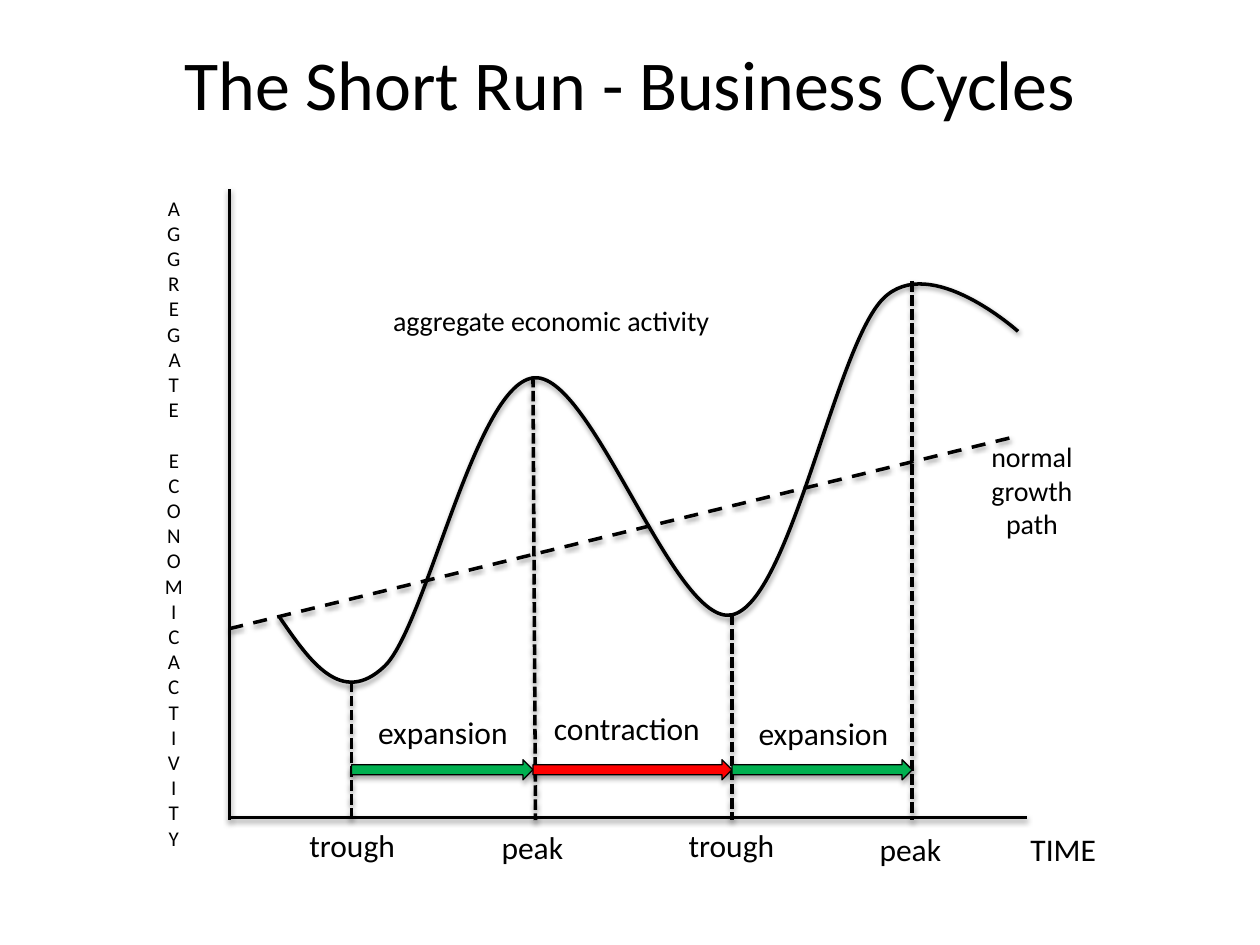
"""Build the business cycles slide: activity curve, growth path and cycle phases."""
from lxml import etree
from pptx import Presentation
from pptx.dml.color import RGBColor
from pptx.enum import dml, shapes, text
from pptx.oxml.ns import qn
from pptx.util import Inches, Pt

THEME = {
    "font": "Calibri", "ink": "000000", "up": "00B050", "down": "FF0000",
    "title": 40, "label": 18, "note": 16, "axis": 12, "line": 2, "outline": 0.75,
}
TITLE = "The Short Run - Business Cycles"
AXIS_X, BASE_Y = 1.82, 6.51
AXES = [((AXIS_X, 1.5), (AXIS_X, BASE_Y)), ((8.15, 6.49), (1.83, 6.49))]
GROWTH = ((AXIS_X, 4.99), (8.08, 3.46))
CURVE = [
    (2.22, 4.9),
    (2.46, 5.25), (2.71, 5.61), (3.05, 5.29),
    (3.38, 4.98), (3.77, 3.06), (4.23, 3),
    (4.69, 2.93), (5.35, 4.98), (5.81, 4.88),
    (6.27, 4.78), (6.63, 2.75), (7.01, 2.37),
    (7.38, 2), (8.08, 2.63), (8.08, 2.63),
]
TURNS = [
    ("trough", 2.79, 2.79, 5.41, (2.34, 6.51)),
    ("peak", 4.23, 4.25, 2.99, (3.77, 6.52)),
    ("trough", 5.81, 5.81, 4.88, (5.35, 6.51)),
    ("peak", 7.24, 7.24, 2.23, (6.77, 6.54)),
]
PHASES = [
    ("expansion", "up", (2.79, 5.61)),
    ("contraction", "down", (4.25, 5.58)),
    ("expansion", "up", (5.81, 5.62)),
]
AXIS_NAME = ["AGGREGATE", " ECONOMI", "C ACT I V I TY"]
NOTES = [
    (AXIS_NAME, (1.21, 1.5, 0.34, 5.35), "axis", "CENTER"),
    (["TIME"], (8.08, 6.54, 0.91, 0.4), "label", "LEFT"),
    (["normal growth path"], (7.58, 3.44, 1.22, 0.91), "note", "CENTER"),
    (["aggregate economic activity"], (2.94, 2.36, 2.87, 0.64), "note", "CENTER"),
]


def color(name):
    return RGBColor.from_string(THEME[name])


def write(tf, lines, size, align="CENTER"):
    tf.word_wrap = True
    for i, line in enumerate(lines):
        p = tf.add_paragraph() if i else tf.paragraphs[0]
        p.alignment = text.PP_ALIGN[align]
        r = p.add_run()
        r.text = line
        r.font.name, r.font.size = THEME["font"], Pt(THEME[size])
        r.font.color.rgb = color("ink")


def label(s, lines, box, size, align="CENTER"):
    tf = s.shapes.add_textbox(*map(Inches, box)).text_frame
    write(tf, lines, size, align)
    tf.auto_size = text.MSO_AUTO_SIZE.SHAPE_TO_FIT_TEXT


def stroke(sp, width="line", dash=None, alpha=38, dist=1.6):
    sp.line.color.rgb, sp.line.width = color("ink"), Pt(THEME[width])
    if dash:
        sp.line.dash_style = dash
    effects = etree.SubElement(sp._element.spPr, qn("a:effectLst"))
    shadow = etree.SubElement(
        effects, qn("a:outerShdw"), blurRad=str(Pt(3.1)), dist=str(Pt(dist)),
        dir="5400000", rotWithShape="0")
    ink = etree.SubElement(shadow, qn("a:srgbClr"), val=THEME["ink"])
    etree.SubElement(ink, qn("a:alpha"), val=str(alpha * 1000))


def line(s, start, end, dash=None):
    ends = map(Inches, (*start, *end))
    stroke(s.shapes.add_connector(shapes.MSO_CONNECTOR.STRAIGHT, *ends), dash=dash)


def curve(s, points):
    start, *rest = [(Inches(x), Inches(y)) for x, y in points]
    builder = s.shapes.build_freeform(*start)
    builder.add_line_segments(rest, close=False)
    sp = builder.convert_to_shape()
    path = sp._element.spPr.find(".//" + qn("a:path"))
    steps = path.findall(qn("a:lnTo"))
    for i in range(0, len(steps), 3):
        bezier = etree.SubElement(path, qn("a:cubicBezTo"))
        for step in steps[i:i + 3]:
            bezier.append(step[0])
            path.remove(step)
    sp.fill.background()
    stroke(sp)


def arrow(s, left, right, fill):
    box = map(Inches, (left, 6.03, right - left, 0.16))
    sp = s.shapes.add_shape(shapes.MSO_SHAPE.RIGHT_ARROW, *box)
    sp.fill.solid()
    sp.fill.fore_color.rgb = color(fill)
    stroke(sp, "outline", alpha=35, dist=1.8)


def main():
    prs = Presentation()
    prs.slide_width, prs.slide_height = Inches(10), Inches(7.5)
    s = prs.slides.add_slide(prs.slide_layouts[5])
    title = s.shapes.title
    title.left, title.top, title.width, title.height = map(Inches, (0.5, 0.03, 9, 1.25))
    title.text_frame.vertical_anchor = text.MSO_ANCHOR.MIDDLE
    write(title.text_frame, [TITLE], "title")

    for start, end in AXES:
        line(s, start, end)
    line(s, *GROWTH, dash=dml.MSO_LINE.DASH)
    curve(s, CURVE)
    for note in NOTES:
        label(s, *note)
    for name, top_x, base_x, top_y, at in TURNS:
        line(s, (top_x, top_y), (base_x, BASE_Y), dml.MSO_LINE.SQUARE_DOT)
        label(s, [name], (*at, 0.91, 0.4), "label")
    for (name, fill, at), left, right in zip(PHASES, TURNS, TURNS[1:]):
        arrow(s, left[1], right[1], fill)
        label(s, [name], (*at, 1.45, 0.4), "label")
    prs.save("out.pptx")


if __name__ == "__main__":
    main()
